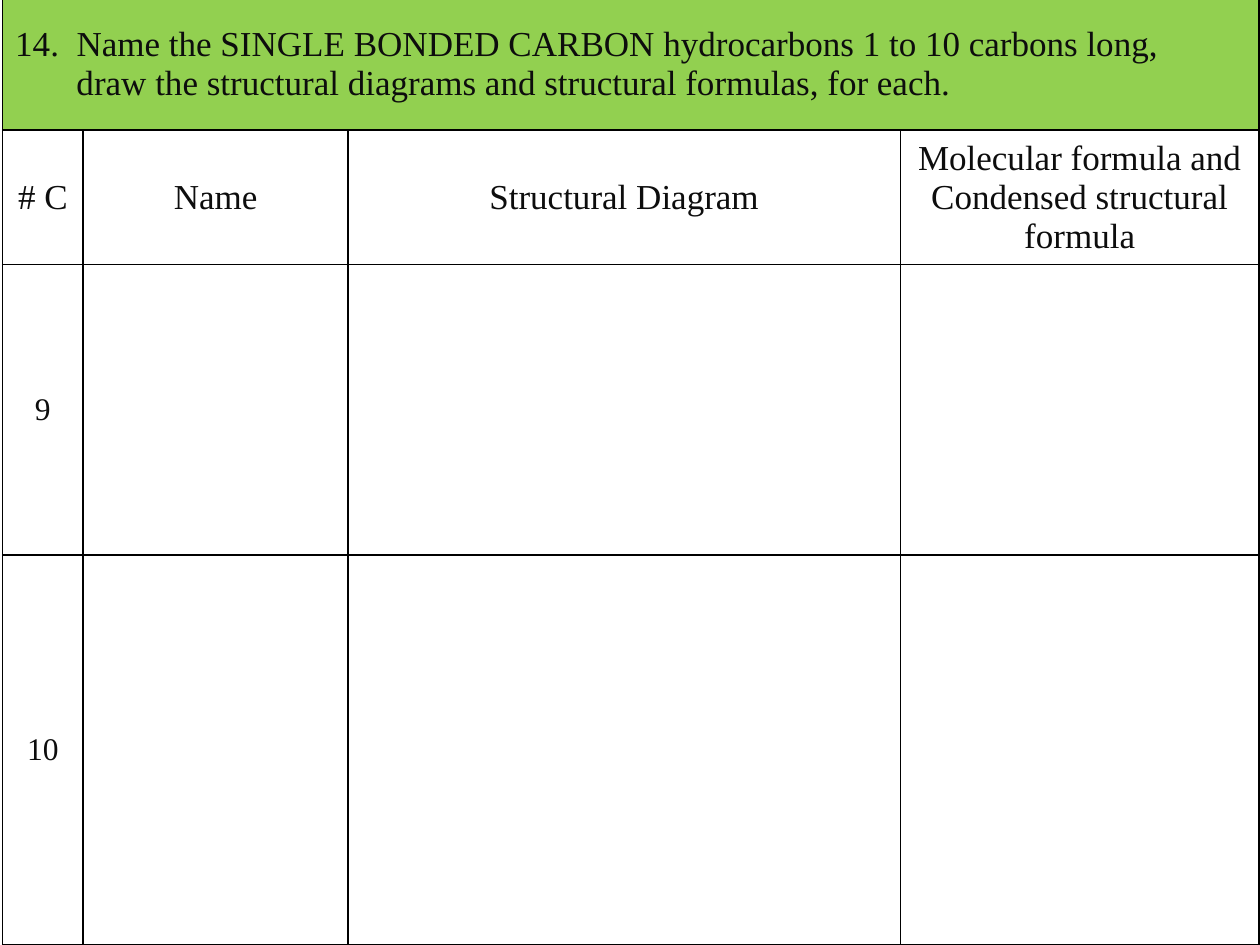
from dataclasses import dataclass

from lxml.etree import SubElement
from pptx import Presentation
from pptx.dml.color import RGBColor
from pptx.enum.text import MSO_ANCHOR, PP_ALIGN
from pptx.oxml.ns import qn
from pptx.util import Pt


@dataclass(frozen=True)
class Theme:
    font: str = "Times New Roman"
    ink: str = "0D0D0D"
    line: str = "000000"
    band: str = "92D050"
    head: int = 20
    body: int = 18
    rule: int = 1


class Sheet:
    def __init__(self, slide, theme):
        self.slide = slide
        self.theme = theme

    def table(self, left, top, cols, rows):
        """Add a plain table with ruled, unfilled cells."""
        frame = self.slide.shapes.add_table(
            len(rows), len(cols), Pt(left), Pt(top), Pt(sum(cols)), Pt(sum(rows)))
        grid = frame.table
        grid.first_row = grid.horz_banding = False
        for col, width in zip(grid.columns, cols):
            col.width = Pt(width)
        for row, height in zip(grid.rows, rows):
            row.height = Pt(height)
        for cell in grid.iter_cells():
            self.border(cell)
            cell.fill.background()
        return grid

    def border(self, cell):
        props = cell._tc.get_or_add_tcPr()
        for side in ("a:lnL", "a:lnR", "a:lnT", "a:lnB"):
            line = SubElement(props, qn(side), w=str(Pt(self.theme.rule)))
            fill = SubElement(line, qn("a:solidFill"))
            SubElement(fill, qn("a:srgbClr"), val=self.theme.line)

    def text(self, cell, lines, size, align=PP_ALIGN.CENTER):
        cell.vertical_anchor = MSO_ANCHOR.MIDDLE
        para = cell.text_frame.paragraphs[0]
        para.alignment = align
        for i, line in enumerate(lines):
            if i:
                para.add_line_break()
            run = para.add_run()
            run.text = line
            run.font.name = self.theme.font
            run.font.size = Pt(size)
            run.font.color.rgb = RGBColor.from_string(self.theme.ink)
        return para

    def banner(self, grid, lines, hang):
        """Merge the top row into a filled heading with a hanging indent."""
        cell = grid.cell(0, 0)
        cell.merge(grid.cell(0, len(grid.columns) - 1))
        cell.fill.solid()
        cell.fill.fore_color.rgb = RGBColor.from_string(self.theme.band)
        para = self.text(cell, lines, self.theme.head, PP_ALIGN.LEFT)
        props = para._p.get_or_add_pPr()
        props.set("marL", str(Pt(hang)))
        props.set("indent", str(-Pt(hang)))


TASK = (
    "14.  Name the SINGLE BONDED CARBON hydrocarbons 1 to 10 carbons long,",
    "draw the structural diagrams and structural formulas, for each.",
)
HEADS = ("# C", "Name", "Structural Diagram",
         "Molecular formula and Condensed structural formula")
COUNTS = ("9", "10")


def main():
    deck = Presentation()
    deck.slide_width, deck.slide_height = Pt(720), Pt(540)
    theme = Theme()
    sheet = Sheet(deck.slides.add_slide(deck.slide_layouts[6]), theme)

    grid = sheet.table(1.5, -0.75, cols=(46, 151.5, 315.5, 205),
                       rows=(75, 77, 166, 222.5))
    sheet.banner(grid, TASK, hang=35)
    for col, head in enumerate(HEADS):
        sheet.text(grid.cell(1, col), [head], theme.head)
    for row, count in enumerate(COUNTS, start=2):
        sheet.text(grid.cell(row, 0), [count], theme.body)

    deck.save("out.pptx")


if __name__ == "__main__":
    main()
